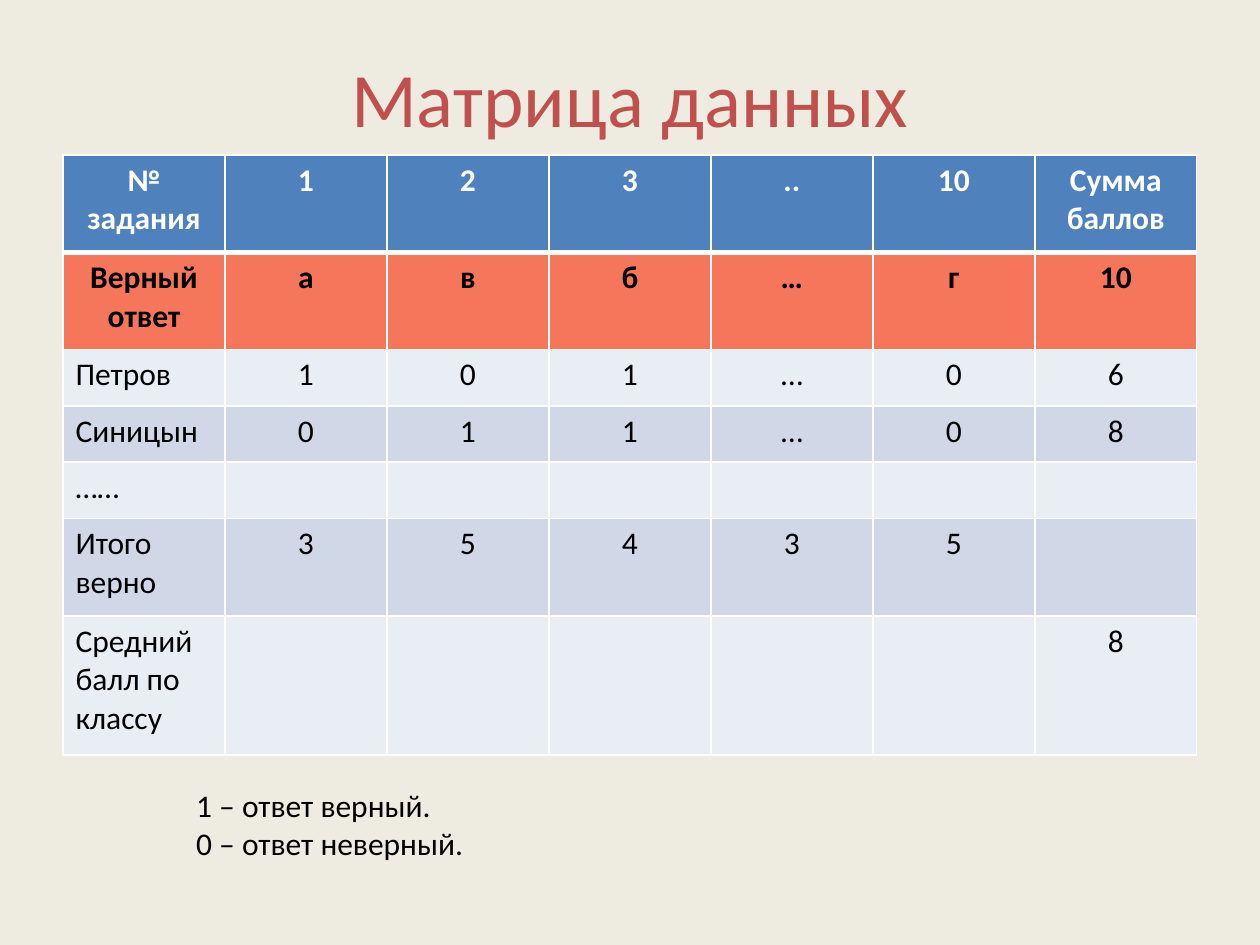
import pptx
import pptx.dml.color
import pptx.enum.text
import pptx.oxml
import pptx.oxml.ns
import pptx.util

Pt = pptx.util.Pt
RGBColor = pptx.dml.color.RGBColor
ALIGN = pptx.enum.text.PP_ALIGN
ANCHOR = pptx.enum.text.MSO_ANCHOR

BACKGROUND = RGBColor(0xEE, 0xEC, 0xE1)
TITLE_RED = RGBColor(0xC0, 0x50, 0x4D)
HEADER_BLUE = RGBColor(0x4F, 0x81, 0xBD)
ANSWER_CORAL = RGBColor(0xF6, 0x76, 0x5C)
LIGHT_BAND = RGBColor(0xE9, 0xED, 0xF4)
DARK_BAND = RGBColor(0xD0, 0xD8, 0xE8)
WHITE = RGBColor(0xFF, 0xFF, 0xFF)
BLACK = RGBColor(0x00, 0x00, 0x00)

ROWS = [
    ["№ задания", "1", "2", "3", "..", "10", "Сумма баллов"],
    ["Верный ответ", "а", "в", "б", "…", "г", "10"],
    ["Петров", "1", "0", "1", "…", "0", "6"],
    ["Синицын", "0", "1", "1", "…", "0", "8"],
    ["……", "", "", "", "", "", ""],
    ["Итого верно", "3", "5", "4", "3", "5", ""],
    ["Средний балл по классу", "", "", "", "", "", "8"],
]
ROW_HEIGHTS = [55.6, 55.6, 32.2, 32.2, 32.2, 55.6, 79.4]
LEGEND = ["1 – ответ верный.", "0 – ответ неверный."]


class SlideBuilder:
    font_name = "Calibri"
    body_size = 18
    title_size = 44

    def __init__(self, slide):
        self.slide = slide

    def background(self, color):
        self.slide.background.fill.solid()
        self.slide.background.fill.fore_color.rgb = color

    def add_text(self, paragraph, text, size, color, bold=False, align=ALIGN.LEFT):
        paragraph.alignment = align
        paragraph.font.size = Pt(size)
        if not text:
            return
        run = paragraph.add_run()
        run.text = text
        run.font.name = self.font_name
        run.font.size = Pt(size)
        run.font.bold = bold
        run.font.color.rgb = color

    def title(self, text, left, top, width, height):
        shape = self.slide.shapes.title
        shape.left, shape.top = Pt(left), Pt(top)
        shape.width, shape.height = Pt(width), Pt(height)
        shape.text_frame.vertical_anchor = ANCHOR.MIDDLE
        self.add_text(shape.text_frame.paragraphs[0], text, self.title_size,
                      TITLE_RED, align=ALIGN.CENTER)

    def text_box(self, lines, left, top, width, height):
        shape = self.slide.shapes.add_textbox(Pt(left), Pt(top), Pt(width), Pt(height))
        frame = shape.text_frame
        frame.word_wrap = True
        frame.auto_size = pptx.enum.text.MSO_AUTO_SIZE.SHAPE_TO_FIT_TEXT
        for index, line in enumerate(lines):
            paragraph = frame.add_paragraph() if index else frame.paragraphs[0]
            self.add_text(paragraph, line, self.body_size, BLACK)

    def cell_borders(self, cell, top, bottom):
        properties = cell._tc.get_or_add_tcPr()
        for side, width in (("L", 1), ("R", 1), ("T", top), ("B", bottom)):
            properties.append(pptx.oxml.parse_xml(
                f'<a:ln{side} {pptx.oxml.ns.nsdecls("a")} w="{Pt(width)}">'
                f'<a:solidFill><a:srgbClr val="{WHITE}"/></a:solidFill></a:ln{side}>'))

    def table(self, rows, heights, left, top, width):
        """Draw a table with a header, a row of right answers and banded results."""
        columns = len(rows[0])
        table = self.slide.shapes.add_table(
            len(rows), columns, Pt(left), Pt(top), Pt(width), Pt(sum(heights))).table
        for column in table.columns:
            column.width = Pt(width / columns)
        for r, (texts, height) in enumerate(zip(rows, heights)):
            table.rows[r].height = Pt(height)
            band = LIGHT_BAND if r % 2 == 0 else DARK_BAND
            fill = {0: HEADER_BLUE, 1: ANSWER_CORAL}.get(r, band)
            for c, text in enumerate(texts):
                cell = table.cell(r, c)
                self.cell_borders(cell, 3 if r == 1 else 1, 3 if r == 0 else 1)
                cell.fill.solid()
                cell.fill.fore_color.rgb = fill
                self.add_text(cell.text_frame.paragraphs[0], text, self.body_size,
                              WHITE if r == 0 else BLACK, bold=r < 2,
                              align=ALIGN.LEFT if r > 1 and c == 0 else ALIGN.CENTER)


def main():
    presentation = pptx.Presentation()
    presentation.slide_width, presentation.slide_height = Pt(720), Pt(540)
    title_only = presentation.slide_layouts[5]
    builder = SlideBuilder(presentation.slides.add_slide(title_only))
    builder.background(BACKGROUND)
    builder.title("Матрица данных", 36, 10, 648, 90)
    builder.table(ROWS, ROW_HEIGHTS, 36, 88.6, 648)
    builder.text_box(LEGEND, 105, 445.5, 294.5, 51)
    presentation.save("out.pptx")


if __name__ == "__main__":
    main()
